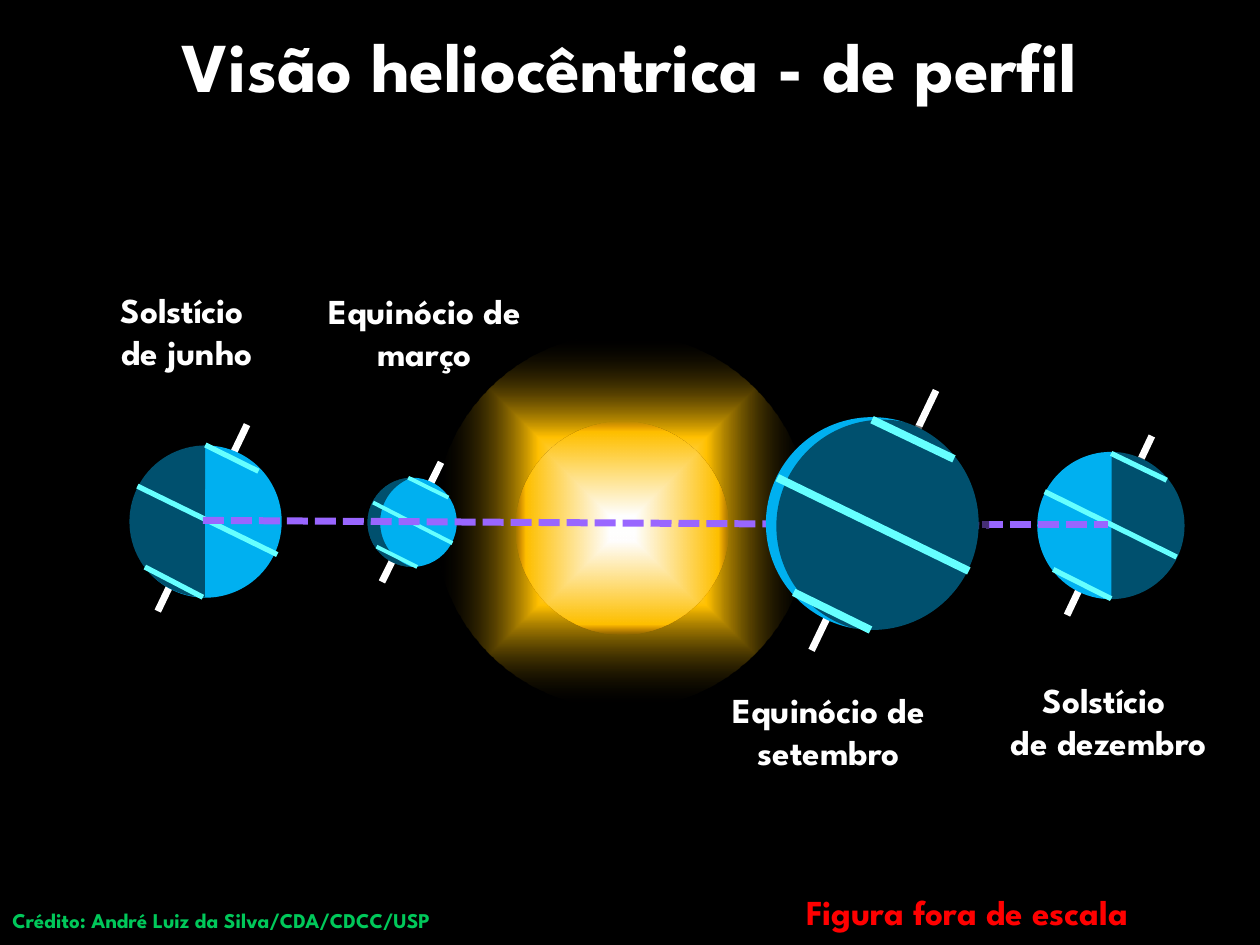
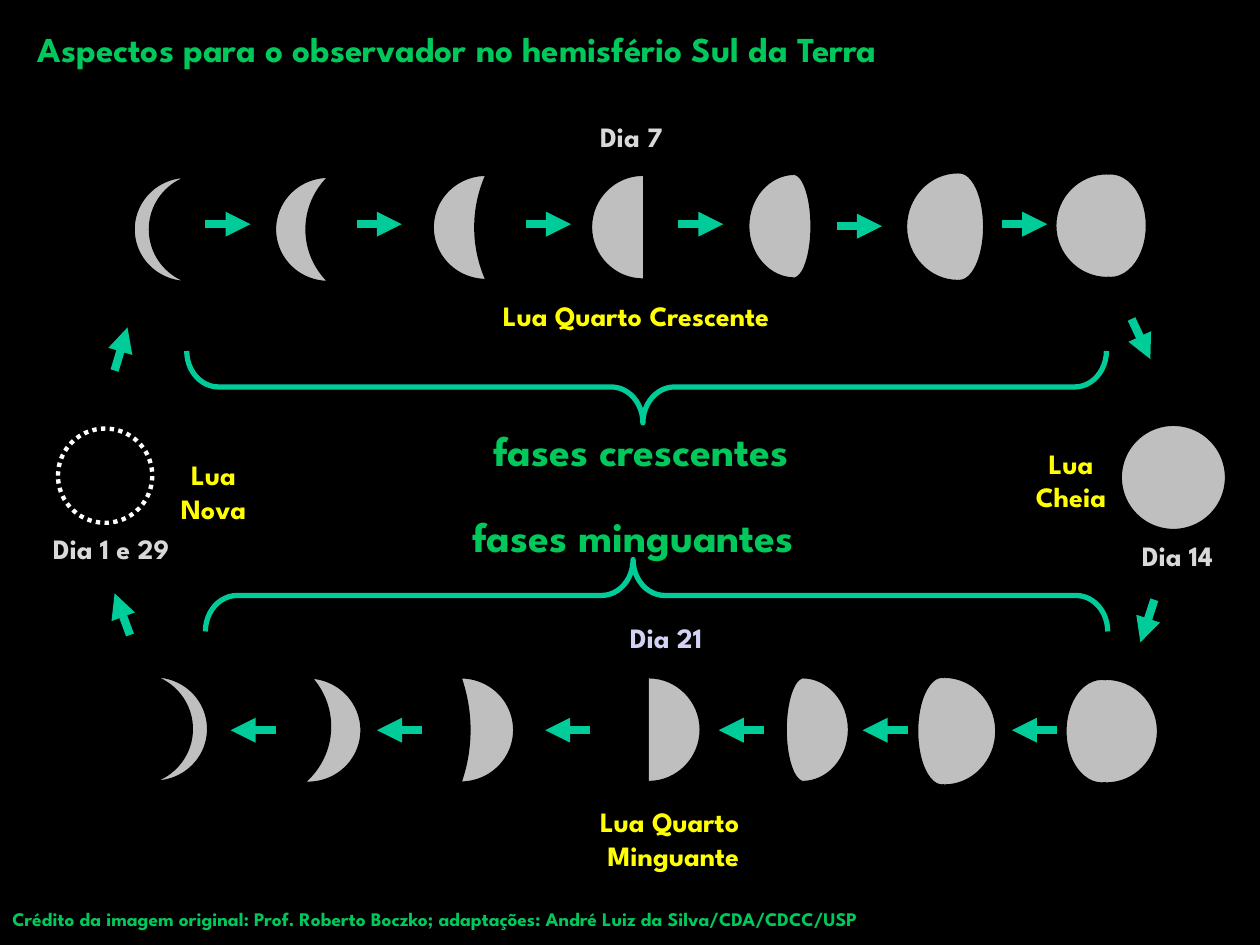
"""Build two slides on the Earth's orbit seen in profile and the phases of the Moon."""
from lxml.etree import SubElement
from pptx import Presentation
from pptx.dml.color import RGBColor
from pptx.enum.dml import MSO_LINE
from pptx.enum.shapes import MSO_CONNECTOR, MSO_SHAPE
from pptx.enum.text import MSO_AUTO_SIZE, PP_ALIGN
from pptx.oxml import parse_xml
from pptx.oxml.ns import nsdecls, qn
from pptx.util import Cm, Pt

FONT = "League Spartan"
BLACK = RGBColor(0x00, 0x00, 0x00)
WHITE = RGBColor(0xFF, 0xFF, 0xFF)
GREEN = RGBColor(0x00, 0xC8, 0x5A)
RED = RGBColor(0xFF, 0x00, 0x00)
YELLOW = RGBColor(0xFF, 0xFF, 0x00)
LIGHT_GRAY = RGBColor(0xD9, 0xD9, 0xD9)
LAVENDER = RGBColor(0xD2, 0xD2, 0xF4)
EARTH_BLUE = RGBColor(0x00, 0xB0, 0xF0)
PARALLEL_CYAN = RGBColor(0x66, 0xFF, 0xFF)
ORBIT_PURPLE = RGBColor(0x99, 0x66, 0xFF)
MOON_GRAY = RGBColor(0xBF, 0xBF, 0xBF)
ARROW_TEAL = RGBColor(0x00, 0xCC, 0x99)


def add_text(slide, text, left, top, width, size=16, color=WHITE,
             align=PP_ALIGN.CENTER, lines=1, wrap=True):
    height = Pt(size * 1.2 * lines) + Cm(0.25)
    box = slide.shapes.add_textbox(Cm(left), Cm(top), Cm(width), height)
    box.text_frame.word_wrap = wrap
    box.text_frame.auto_size = MSO_AUTO_SIZE.SHAPE_TO_FIT_TEXT
    box.text_frame.text = text
    for paragraph in box.text_frame.paragraphs:
        paragraph.alignment = align
        font = paragraph.runs[0].font
        font.name, font.size, font.bold = FONT, Pt(size), True
        font.color.rgb = color


def set_style(item, fill=None, opacity=None, line=None, width=1, dash=None, arrow=False):
    properties = item._element.spPr
    if fill is not None:
        item.fill.solid()
        item.fill.fore_color.rgb = fill
        if opacity:
            color = next(properties.iter(qn("a:srgbClr")))
            SubElement(color, qn("a:alpha"), val=str(opacity * 1000))
    elif hasattr(item, "fill"):
        item.fill.background()
    if line is None:
        item.line.fill.background()
    else:
        item.line.color.rgb = line
        item.line.width = Pt(width)
        if dash:
            item.line.dash_style = dash
        if arrow:
            SubElement(properties.find(qn("a:ln")), qn("a:tailEnd"), type="triangle")
    SubElement(properties, qn("a:effectLst"))


presentation = Presentation()
presentation.slide_width = Cm(25.4)
presentation.slide_height = Cm(19.05)
slides = []
for number in range(2):
    slide = presentation.slides.add_slide(presentation.slide_layouts[6])
    slide.background.fill.solid()
    slide.background.fill.fore_color.rgb = BLACK
    slides.append(slide)
orbit_slide, phases_slide = slides

sun_layers = [
    (8.76, 6.73, 7.55, [(7, "FFFFFF", 100), (45, "FFC000", 100), (100, "000000", 0)]),
    (10.39, 8.5, 4.29, [(12, "FFFFFF", 100), (90, "FFC000", 100), (100, "EE8800", 0)]),
]
for left, top, diameter, stops in sun_layers:
    sun = orbit_slide.shapes.add_shape(
        MSO_SHAPE.OVAL, Cm(left), Cm(top), Cm(diameter), Cm(diameter))
    set_style(sun)
    stop_xml = "".join(
        f'<a:gs pos="{position * 1000}"><a:srgbClr val="{color}">'
        f'<a:alpha val="{opacity * 1000}"/></a:srgbClr></a:gs>'
        for position, color, opacity in stops)
    gradient = parse_xml(
        f'<a:gradFill {nsdecls("a")} rotWithShape="1"><a:gsLst>{stop_xml}</a:gsLst>'
        '<a:path path="shape"><a:fillToRect l="50000" t="50000" r="50000" b="50000"/>'
        '</a:path></a:gradFill>')
    properties = sun._element.spPr
    properties.replace(properties.find(qn("a:noFill")), gradient)

add_text(orbit_slide, "Visão heliocêntrica - de perfil", 1.9, 0.33, 21.59, size=40)
for text, left, top, width in [
    ("Solstício \nde junho", 1.52, 5.69, 4.5),
    ("Solstício \nde dezembro", 19.7, 13.55, 5.31),
    ("Equinócio de março", 6.31, 5.72, 4.5),
    ("Equinócio de setembro", 14.05, 13.75, 5.31),
]:
    add_text(orbit_slide, text, left, top, width, size=20, lines=2)
add_text(orbit_slide, "Crédito: André Luiz da Silva/CDA/CDCC/USP", 0, 18.17, 25.4,
         size=12, color=GREEN, align=PP_ALIGN.LEFT)
add_text(orbit_slide, "Figura fora de escala", 16, 17.83, 8.99,
         size=20, color=RED, align=PP_ALIGN.LEFT)

HALF_DISC = [54.09, 162.02]
orbit_path = [(19.79, 10.57, 22.33, 10.57), (4.09, 10.49, 19.94, 10.59)]
globes = [
    ("junho", (3.18, 12.32, 4.98, 8.56), (2.61, 8.98, 3.07),
     (MSO_SHAPE.CHORD, 2.6, 8.97, 3.07, 3.07), HALF_DISC, 0, 3,
     [(4.14, 8.97, 5.21, 9.5), (2.92, 11.43, 4.09, 12.04), (2.77, 9.8, 5.59, 11.18)]),
    ("março", (7.7, 11.73, 8.89, 9.32), (7.41, 9.63, 1.8),
     (MSO_SHAPE.MOON, 7.41, 9.63, 0.89, 1.8), [0.285], 0, 2.25,
     [(8.23, 9.63, 9.04, 10.03), (7.52, 10.13, 9.12, 10.95), (7.59, 11.02, 8.41, 11.43)]),
    ("dezembro", (21.51, 12.4, 23.22, 8.79), (20.91, 9.11, 2.97),
     (MSO_SHAPE.CHORD, 20.92, 9.1, 2.97, 3), HALF_DISC, 180, 3,
     [(22.4, 9.14, 23.52, 9.68), (21.23, 11.48, 22.4, 12.07), (21.06, 9.91, 23.72, 11.23)]),
    ("setembro", (16.36, 13.11, 18.87, 7.87), (15.44, 8.41, 4.29),
     (MSO_SHAPE.OVAL, 15.65, 8.46, 4.29, 4.29), [], 180, 4.5,
     [(17.58, 8.46, 19.23, 9.25), (16, 11.94, 17.55, 12.7), (15.67, 9.63, 19.53, 11.51)]),
]
for month, axis, disc, shade, adjustments, rotation, parallel_width, parallels in globes:
    if month == "setembro":
        for ends in orbit_path:
            path_line = orbit_slide.shapes.add_connector(
                MSO_CONNECTOR.STRAIGHT, *map(Cm, ends))
            set_style(path_line, line=ORBIT_PURPLE, width=4, dash=MSO_LINE.SQUARE_DOT)
    axis_line = orbit_slide.shapes.add_connector(MSO_CONNECTOR.STRAIGHT, *map(Cm, axis))
    set_style(axis_line, line=WHITE, width=4)
    left, top, diameter = map(Cm, disc)
    globe = orbit_slide.shapes.add_shape(MSO_SHAPE.OVAL, left, top, diameter, diameter)
    set_style(globe, fill=EARTH_BLUE)
    night = orbit_slide.shapes.add_shape(shade[0], *map(Cm, shade[1:]))
    for index, value in enumerate(adjustments):
        night.adjustments[index] = value
    night.rotation = rotation
    set_style(night, fill=BLACK, opacity=54)
    for ends in parallels:
        parallel = orbit_slide.shapes.add_connector(MSO_CONNECTOR.STRAIGHT, *map(Cm, ends))
        set_style(parallel, line=PARALLEL_CYAN, width=parallel_width)

for left, top, diameter, style in [
    (1.17, 8.64, 1.9, {"fill": BLACK, "line": WHITE, "width": 2.5, "dash": MSO_LINE.ROUND_DOT}),
    (22.6, 8.57, 2.11, {"fill": MOON_GRAY, "line": BLACK}),
]:
    moon = phases_slide.shapes.add_shape(
        MSO_SHAPE.OVAL, Cm(left), Cm(top), Cm(diameter), Cm(diameter))
    set_style(moon, **style)

for left, top, thickness, rotation in [
    (2.7, 3.57, 0.296, 0), (5.55, 3.57, 0.583, 0), (8.73, 3.53, 0.792, 0),
    (3.12, 13.64, 0.296, 180), (6.21, 13.7, 0.583, 184), (9.29, 13.66, 0.833, 180),
]:
    crescent = phases_slide.shapes.add_shape(
        MSO_SHAPE.MOON, Cm(left), Cm(top), Cm(1.07), Cm(2.11))
    crescent.adjustments[0] = thickness
    crescent.rotation = rotation
    set_style(crescent, fill=MOON_GRAY, line=BLACK)

WAXING, WANING = -1, 1
ARC_HANDLE = 0.55
for side, edge, middle, radius_x, radius_y, bulge_center, bulge_width in [
    (WAXING, 12.96, 4.58, 1.04, 1.05, None, None),
    (WAXING, 16.02, 4.56, 0.93, 1.05, 16, 0.71),
    (WAXING, 19.31, 4.57, 1.04, 1.09, 19.34, 0.99),
    (WAXING, 22.32, 4.55, 1.04, 1.05, 22.39, 1.45),
    (WANING, 13.08, 14.71, 1.04, 1.05, None, None),
    (WANING, 16.18, 14.71, 0.93, 1.05, 16.2, 0.71),
    (WANING, 19.04, 14.74, 1.04, 1.09, 18.99, 0.99),
    (WANING, 22.3, 14.74, 1.04, 1.05, 22.21, 1.45),
]:
    if bulge_width:
        bulge = phases_slide.shapes.add_shape(
            MSO_SHAPE.OVAL, Cm(bulge_center - bulge_width / 2), Cm(middle - radius_y),
            Cm(bulge_width), Cm(2 * radius_y))
        set_style(bulge, fill=MOON_GRAY, line=BLACK)
    builder = phases_slide.shapes.build_freeform(Cm(edge), Cm(middle - radius_y))
    builder.add_line_segments([(Cm(edge + side * radius_x), Cm(middle)),
                               (Cm(edge), Cm(middle + radius_y))])
    half_moon = builder.convert_to_shape()
    set_style(half_moon, fill=MOON_GRAY, line=BLACK)
    width, height = half_moon.width, half_moon.height
    start, middle_xml, *curves = [
        f'<a:pt x="{round(width * (across if side == WANING else 1 - across))}" '
        f'y="{round(height * (1 + down) / 2)}"/>'
        for across, down in [(0, -1), (0, 0), (ARC_HANDLE, -1), (1, -ARC_HANDLE), (1, 0),
                             (1, ARC_HANDLE), (ARC_HANDLE, 1), (0, 1)]]
    arc = (f'<a:moveTo>{start}</a:moveTo>'
           f'<a:cubicBezTo>{"".join(curves[:3])}</a:cubicBezTo>'
           f'<a:cubicBezTo>{"".join(curves[3:])}</a:cubicBezTo>')
    extent = f'w="{width}" h="{height}"'
    outlines = parse_xml(
        f'<a:pathLst {nsdecls("a")}><a:path {extent} stroke="0">{arc}'
        f'<a:lnTo>{middle_xml}</a:lnTo><a:close/></a:path>'
        f'<a:path {extent} fill="none">{arc}</a:path></a:pathLst>')
    geometry = half_moon._element.spPr.find(qn("a:custGeom"))
    geometry.replace(geometry.find(qn("a:pathLst")), outlines)

for text, left, top, width, color in [
    ("Dia 1 e 29", 0.5, 10.59, 3.48, LIGHT_GRAY),
    ("Dia 7", 11.11, 2.29, 3.23, LIGHT_GRAY),
    ("Dia 14", 22.58, 10.73, 2.31, LIGHT_GRAY),
    ("Dia 21", 12.14, 12.39, 2.57, LAVENDER),
    ("Lua Quarto Crescente", 9.7, 5.9, 6.25, YELLOW),
]:
    add_text(phases_slide, text, left, top, width, color=color)
for text, left, top, width in [
    ("Lua\nNova", 3.3, 9.1, 2.01),
    ("Lua\nCheia", 20.5, 8.87, 2.18),
    ("Lua Quarto \nMinguante", 11.71, 16.1, 3.73),
]:
    add_text(phases_slide, text, left, top, width, color=YELLOW, lines=2, wrap=False)
add_text(phases_slide, "Aspectos para o observador no hemisfério Sul da Terra", 0.51, 0.43,
         22.07, size=20, color=GREEN, align=PP_ALIGN.LEFT)
add_text(phases_slide, "Crédito da imagem original: Prof. Roberto Boczko; "
         "adaptações: André Luiz da Silva/CDA/CDCC/USP", 0, 18.16, 22.33,
         size=11, color=GREEN, align=PP_ALIGN.LEFT)
add_text(phases_slide, "fases crescentes", 8.54, 8.43, 8.76, size=24, color=GREEN)
add_text(phases_slide, "fases minguantes", 7.7, 10.16, 10.13, size=24, color=GREEN)

for left, top, length, tip, rotation in [
    (12.31, -1.47, 18.54, 0.496, 270), (12.51, 2.91, 18.19, 0.526, 90),
]:
    brace = phases_slide.shapes.add_shape(
        MSO_SHAPE.LEFT_BRACE, Cm(left), Cm(top), Cm(1.45), Cm(length))
    brace.adjustments[0] = 0.441
    brace.adjustments[1] = tip
    brace.rotation = rotation
    set_style(brace, line=ARROW_TEAL, width=3)

ARROW_LENGTH = 0.91
arrows = [(2.31, 7.47, 2.57, 6.6), (2.62, 12.8, 2.31, 11.96),
          (22.81, 6.43, 23.19, 7.24), (23.27, 12.09, 22.99, 12.95)]
arrows += [(start, height, start + ARROW_LENGTH, height)
           for start, height in [(4.14, 4.52), (7.19, 4.52), (10.6, 4.52),
                                 (13.67, 4.52), (16.87, 4.56), (20.2, 4.52)]]
arrows += [(start, 14.72, start - ARROW_LENGTH, 14.72)
           for start in (5.56, 8.51, 11.9, 15.4, 18.3, 21.31)]
for ends in arrows:
    arrow = phases_slide.shapes.add_connector(MSO_CONNECTOR.STRAIGHT, *map(Cm, ends))
    set_style(arrow, line=ARROW_TEAL, width=4.75, arrow=True)

presentation.save("out.pptx")
